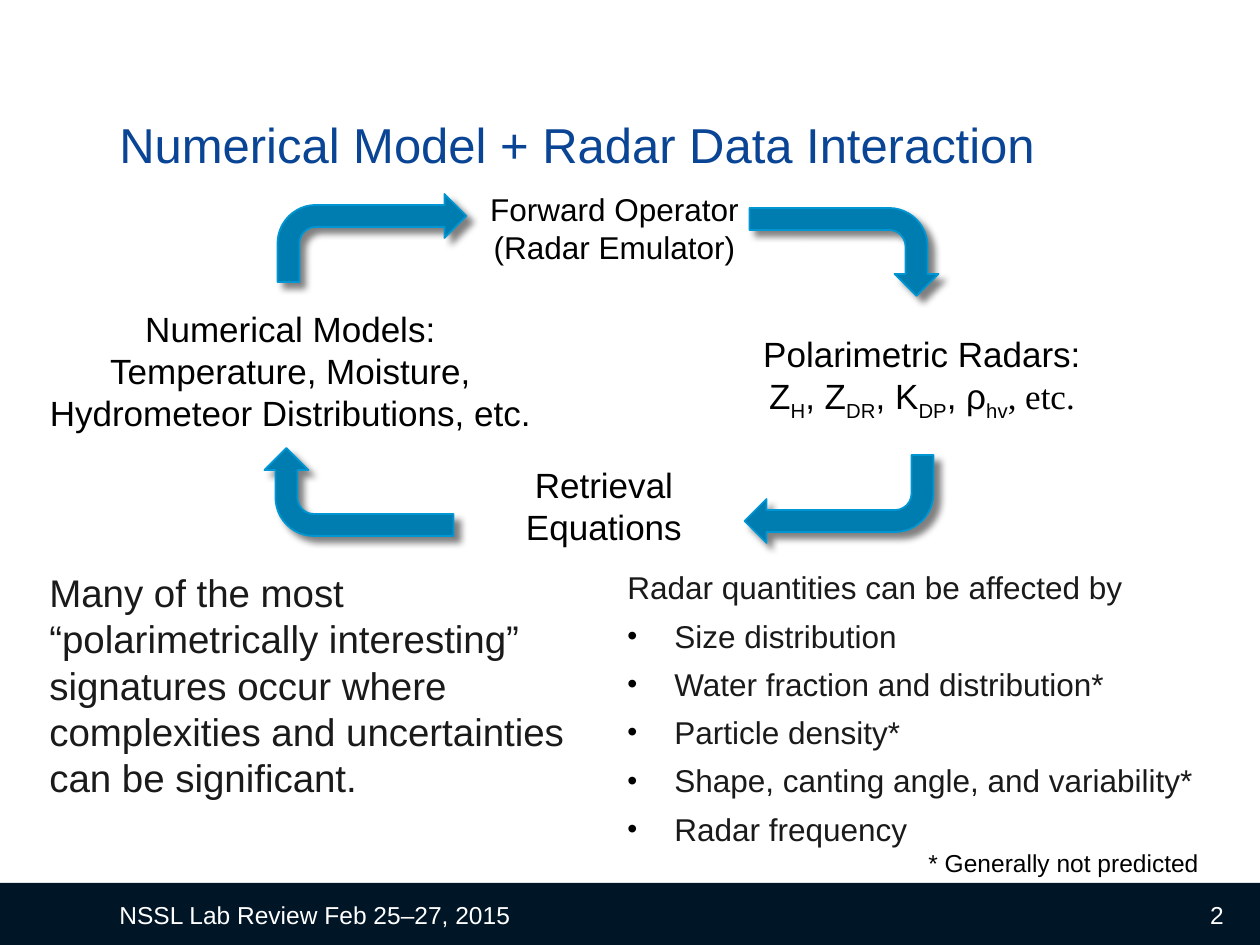
from dataclasses import dataclass

from lxml import etree
from pptx import Presentation
from pptx.dml.color import RGBColor
from pptx.enum.shapes import MSO_SHAPE
from pptx.enum.text import MSO_ANCHOR, MSO_AUTO_SIZE, PP_ALIGN
from pptx.oxml.ns import qn
from pptx.util import Emu, Pt

RECTANGLE, BENT_ARROW = MSO_SHAPE.RECTANGLE, MSO_SHAPE.BENT_ARROW
LEFT, CENTER, RIGHT = PP_ALIGN.LEFT, PP_ALIGN.CENTER, PP_ALIGN.RIGHT
TOP, MIDDLE, BOTTOM = MSO_ANCHOR.TOP, MSO_ANCHOR.MIDDLE, MSO_ANCHOR.BOTTOM
GROW = MSO_AUTO_SIZE.SHAPE_TO_FIT_TEXT

PX_PER_INCH = 126
SLIDE_WIDTH, SLIDE_HEIGHT = 1260, 945
ARROW_LENGTH, ARROW_DEPTH = 189, 88


@dataclass(frozen=True)
class Theme:
    font: str = "Arial"
    serif: str = "Times New Roman"
    title: str = "0A4595"
    black: str = "000000"
    body: str = "1A1A1A"
    white: str = "FFFFFF"
    footer: str = "001526"
    arrow: str = "007DB0"
    arrow_line: str = "0096D3"
    title_size: int = 28
    statement_size: int = 22
    label_size: int = 20
    list_size: int = 18
    small_size: int = 14


THEME = Theme()

# Clockwise cycle: centre x, centre y, rotation
ARROWS = [
    (372, 238, 0),
    (844, 252, 90),
    (839, 499, 180),
    (359, 492, 270),
]

FACTORS = [
    "Size distribution",
    "Water fraction and distribution*",
    "Particle density*",
    "Shape, canting angle, and variability*",
    "Radar frequency",
]

# Radar variables: symbol, subscript
VARIABLES = [("Z", "H"), (", Z", "DR"), (", K", "DP"), (", ρ", "hv")]


def px(length):
    return Emu(round(length * 914400 / PX_PER_INCH))


def rgb(color):
    return RGBColor.from_string(color)


def style(paragraph, size, color):
    paragraph.font.name = THEME.font
    paragraph.font.size = Pt(size)
    paragraph.font.color.rgb = rgb(color)


def add_text(slide, box, lines, size, color, align=LEFT, anchor=TOP, grow=True):
    """Add a wrapped text box with one paragraph per line."""
    frame = slide.shapes.add_textbox(*map(px, box)).text_frame
    frame.word_wrap = True
    frame.vertical_anchor = anchor
    if grow:
        frame.auto_size = GROW
    for index, line in enumerate(lines):
        paragraph = frame.add_paragraph() if index else frame.paragraphs[0]
        paragraph.text = line
        paragraph.alignment = align
        style(paragraph, size, color)
    return frame


def add_bullet(frame, text, size, color):
    paragraph = frame.add_paragraph()
    paragraph.text = text
    paragraph.space_before = Pt(6)
    properties = paragraph._p.get_or_add_pPr()
    indent = px(47)
    properties.set("marL", str(indent))
    properties.set("indent", str(-indent))
    bullet_color = etree.SubElement(properties, qn("a:buClr"))
    etree.SubElement(bullet_color, qn("a:srgbClr"), val=THEME.black)
    etree.SubElement(properties, qn("a:buSzPct"), val="90000")
    etree.SubElement(properties, qn("a:buFont"), typeface=THEME.font)
    etree.SubElement(properties, qn("a:buChar"), char="•")
    style(paragraph, size, color)


def add_shadow(shape):
    effects = etree.SubElement(shape._element.spPr, qn("a:effectLst"))
    shadow = etree.SubElement(
        effects, qn("a:outerShdw"), blurRad=str(Pt(4)), dist=str(Pt(5)),
        dir=str(45 * 60000), algn="tl", rotWithShape="0")
    color = etree.SubElement(shadow, qn("a:srgbClr"), val=THEME.black)
    etree.SubElement(color, qn("a:alpha"), val="50000")


def add_cycle_arrow(slide, center_x, center_y, rotation):
    # Quarter turns swap the sides, so every arrow lies wide on the slide
    width, height = ARROW_LENGTH, ARROW_DEPTH
    if rotation % 180:
        width, height = height, width
    box = (center_x - width / 2, center_y - height / 2, width, height)
    arrow = slide.shapes.add_shape(BENT_ARROW, *map(px, box))
    arrow.rotation = rotation
    arrow.fill.solid()
    arrow.fill.fore_color.rgb = rgb(THEME.arrow)
    arrow.line.color.rgb = rgb(THEME.arrow_line)
    arrow.line.width = Pt(1)
    add_shadow(arrow)


def add_footer(slide):
    band = slide.shapes.add_shape(
        RECTANGLE, *map(px, (0, 883, SLIDE_WIDTH, SLIDE_HEIGHT - 883)))
    band.shadow.inherit = False
    band.fill.solid()
    band.fill.fore_color.rgb = rgb(THEME.footer)
    band.line.fill.background()
    add_text(slide, (107, 890, 576, 50), ["NSSL Lab Review Feb 25–27, 2015"],
             THEME.small_size, THEME.white, anchor=MIDDLE, grow=False)
    add_text(slide, (942, 890, 294, 50), ["2"], THEME.small_size, THEME.white,
             align=RIGHT, anchor=MIDDLE, grow=False)


def add_radar_label(slide):
    frame = add_text(slide, (712, 326, 420, 97), ["Polarimetric Radars:", ""],
                     THEME.label_size, THEME.black, align=CENTER)
    paragraph = frame.paragraphs[1]
    for symbol, subscript in VARIABLES:
        paragraph.add_run().text = symbol
        run = paragraph.add_run()
        run.text = subscript
        run.font._element.set("baseline", "-25000")
    ending = paragraph.add_run()
    ending.text = ", etc."
    ending.font.name = THEME.serif


def add_cycle(slide):
    for arrow in ARROWS:
        add_cycle_arrow(slide, *arrow)
    add_text(slide, (26, 301, 529, 140),
             ["Numerical Models:",
              "Temperature, Moisture, Hydrometeor Distributions, etc."],
             THEME.label_size, THEME.black, align=CENTER)
    add_text(slide, (450, 184, 329, 89),
             ["Forward Operator", "(Radar Emulator)"],
             THEME.list_size, THEME.black, align=CENTER)
    add_radar_label(slide)
    add_text(slide, (454, 457, 300, 97), ["Retrieval Equations"],
             THEME.label_size, THEME.black, align=CENTER)


def add_notes_below_cycle(slide):
    frame = add_text(slide, (615, 562, 645, 295),
                     ["Radar quantities can be affected by"],
                     THEME.list_size, THEME.body)
    for factor in FACTORS:
        add_bullet(frame, factor, THEME.list_size, THEME.body)
    add_text(slide, (37, 563, 577, 246),
             ["Many of the most “polarimetrically interesting” signatures "
              "occur where complexities and uncertainties can be significant."],
             THEME.statement_size, THEME.body)
    add_text(slide, (916, 842, 309, 43), ["* Generally not predicted"],
             THEME.small_size, THEME.black)


def main():
    presentation = Presentation()
    presentation.slide_width = px(SLIDE_WIDTH)
    presentation.slide_height = px(SLIDE_HEIGHT)
    slide = presentation.slides.add_slide(presentation.slide_layouts[6])
    add_footer(slide)
    add_text(slide, (107, 83, 1045, 97),
             ["Numerical Model + Radar Data Interaction"],
             THEME.title_size, THEME.title, anchor=BOTTOM, grow=False)
    add_cycle(slide)
    add_notes_below_cycle(slide)
    presentation.save("out.pptx")


if __name__ == "__main__":
    main()
